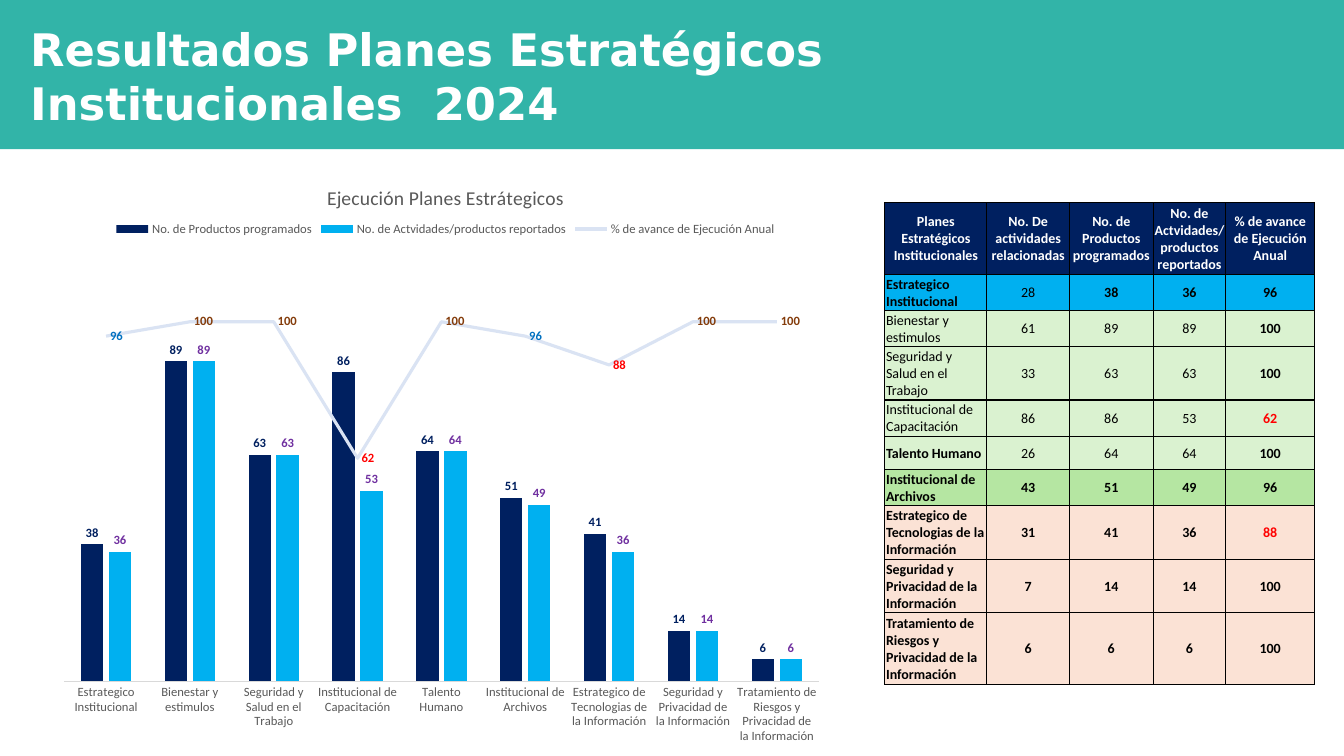
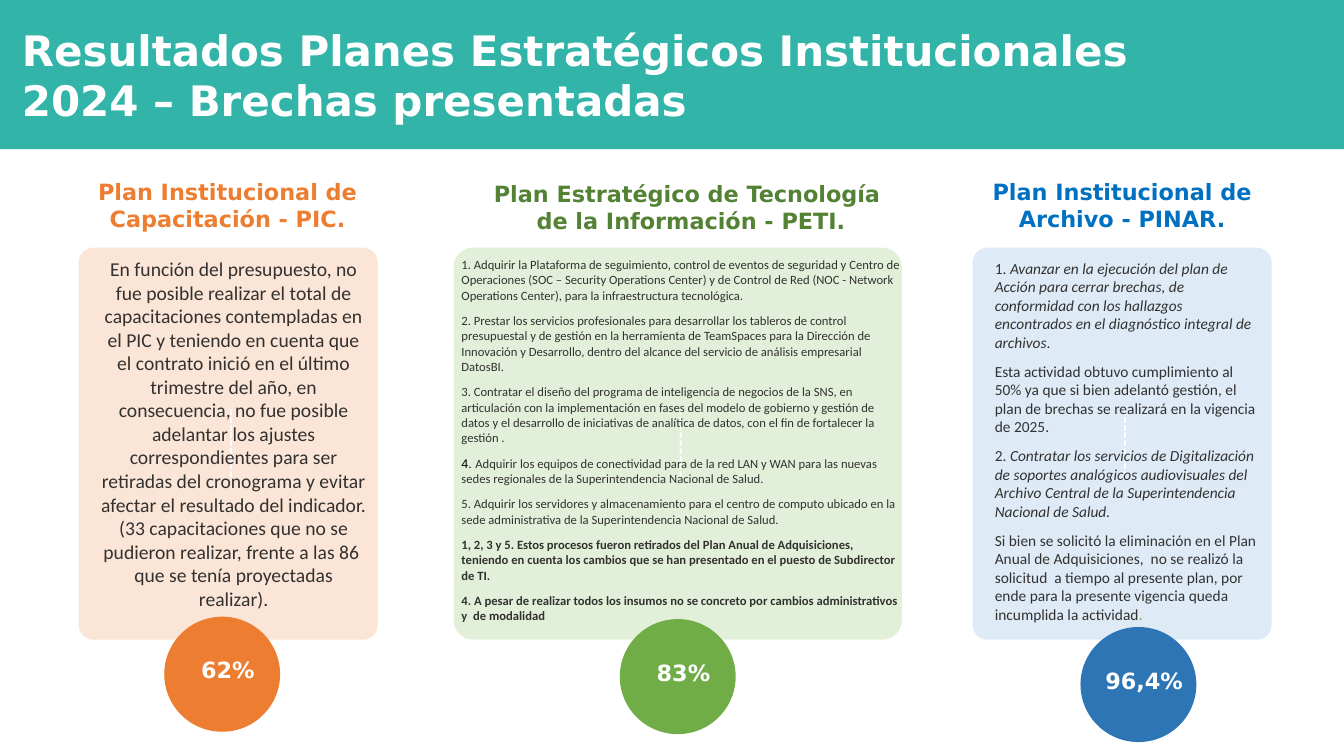
from copy import deepcopy

from lxml import etree
from pptx import Presentation
from pptx import util as u
from pptx.chart.data import CategoryChartData
from pptx.dml.color import RGBColor
from pptx.enum import chart as charts, shapes, text
from pptx.oxml import parse_xml
from pptx.oxml.ns import nsdecls, qn

COLORS = {
    "teal": "32B4A8", "white": "FFFFFF", "black": "000000", "ink": "323130",
    "gray": "595959", "axis": "D9D9D9", "navy": "002060", "sky": "00B0F0",
    "purple": "7030A0", "pale_line": "DAE3F3", "brown": "843C0B",
    "blue": "0070C0", "red": "FF0000", "mint": "DAF2D0", "lime": "B5E6A2",
    "peach": "FBE2D5", "orange": "ED7D31", "orange_pale": "FBE5D6",
    "green": "70AD47", "green_dark": "548235", "green_pale": "E2F0D9",
    "blue_mid": "2E75B6", "blue_pale": "DEEBF7",
}
BODY_FONT = "Calibri"
HEAD_FONT = "DejaVu Sans"

HEADERS = [
    "Planes Estratégicos Institucionales",
    "No. De actividades relacionadas",
    "No. de Productos programados",
    "No. de Actvidades/productos reportados",
    "% de avance de Ejecución Anual",
]
PLANS = [
    ("Estrategico Institucional", 28, 38, 36, 96, "sky", "10111"),
    ("Bienestar y estimulos", 61, 89, 89, 100, "mint", "00001"),
    ("Seguridad y Salud en el Trabajo", 33, 63, 63, 100, "mint", "00001"),
    ("Institucional de Capacitación", 86, 86, 53, 62, "mint", "00001"),
    ("Talento Humano", 26, 64, 64, 100, "mint", "10001"),
    ("Institucional de Archivos", 43, 51, 49, 96, "lime", "11111"),
    ("Estrategico de Tecnologias de la Información", 31, 41, 36, 88, "peach", "11111"),
    ("Seguridad y Privacidad de la Información", 7, 14, 14, 100, "peach", "11111"),
    ("Tratamiento de Riesgos y Privacidad de la Información", 6, 6, 6, 100, "peach", "11111"),
]
COLUMN_WIDTHS = [2.57, 2.08, 2.11, 1.83, 2.24]
ROW_HEIGHTS = [1.8, 0.91, 0.91, 1.35, 0.91, 0.84, 0.91, 1.35, 1.35, 1.8]

BOLD = {"bold": True}
ITALIC = {"italic": True}
PANEL_MIDDLE = 11.18
PANEL_HEIGHT = 9.88
GAPS = [
    {
        "heading": ["Plan Institucional de Capacitación - PIC."],
        "heading_box": (0.91, 4.5, 9.65, 1.4), "heading_color": "orange",
        "panel_center": 5.75, "panel_width": 7.54, "panel_color": "orange_pale",
        "body_box": (2.51, 6.48, 6.76, 9), "size": 14,
        "align": text.PP_ALIGN.CENTER,
        "body": [
            [("En función del presupuesto, no fue posible realizar el total de capacitaciones contempladas en el PIC y teniendo en cuenta que el contrato inició en el último trimestre del año, en consecuencia, no fue posible adelantar los ajustes correspondientes para ser retiradas del cronograma y evitar afectar el resultado del indicador. (33 capacitaciones que no se pudieron realizar, frente a las 86  que se tenía proyectadas realizar).", {})],
        ],
        "circle": (4.14, 15.54), "circle_color": "orange", "percent": "62%",
    },
    {
        "heading": ["Plan Estratégico de Tecnología ", "de la Información - PETI."],
        "heading_box": (8.03, 4.55, 18.77, 1.4), "heading_color": "green_dark",
        "panel_center": 17.08, "panel_width": 11.3, "panel_color": "green_pale",
        "body_box": (11.63, 6.48, 11.1, 9), "size": 9,
        "align": text.PP_ALIGN.LEFT,
        "body": [
            [("1. Adquirir la Plataforma de seguimiento, control de eventos de seguridad y Centro de Operaciones (SOC – Security Operations Center) y de Control de Red (NOC - Network Operations Center), para la infraestructura tecnológica.", {})],
            [("2. Prestar los servicios profesionales para desarrollar los tableros de control presupuestal y de gestión en la herramienta de TeamSpaces para la Dirección de Innovación y Desarrollo, dentro del alcance del servicio de análisis empresarial DatosBI.", {})],
            [("3. Contratar el diseño del programa de inteligencia de negocios de la SNS, en articulación con la implementación en fases del modelo de gobierno y gestión de datos y el desarrollo de iniciativas de analítica de datos, con el fin de fortalecer la gestión .", {})],
            [("4. ", {"font": "Arial", "color": "black"}),
             ("Adquirir los equipos de conectividad para de la red LAN y WAN para las nuevas sedes regionales de la Superintendencia Nacional de Salud.", {})],
            [("5. Adquirir los servidores y almacenamiento para el centro de computo ubicado en la sede administrativa de la Superintendencia Nacional de Salud.", {})],
            [("1, 2, 3 y 5. Estos procesos fueron retirados del Plan Anual de Adquisiciones, teniendo en cuenta los cambios que se han presentado en el puesto de Subdirector de TI.", BOLD)],
            [("4. A pesar de realizar todos los insumos no se concreto por cambios administrativos y  de modalidad", BOLD)],
        ],
        "circle": (15.62, 15.6), "circle_color": "green", "percent": "83%",
    },
    {
        "heading": ["Plan Institucional de Archivo - PINAR."],
        "heading_box": (24.51, 4.5, 7.54, 1.4), "heading_color": "blue",
        "panel_center": 28.28, "panel_width": 7.54, "panel_color": "blue_pale",
        "body_box": (25.07, 6.53, 6.71, 9), "size": 11,
        "align": text.PP_ALIGN.LEFT,
        "body": [
            [("1. ", {}),
             ("Avanzar en la ejecución del plan de Acción para cerrar brechas, de conformidad con los hallazgos encontrados en el diagnóstico integral de archivos", ITALIC),
             (".", {})],
            [("Esta actividad obtuvo cumplimiento al 50% ya que si bien adelantó gestión, el plan de brechas se realizará en la vigencia de 2025.", {})],
            [("2. ", {}),
             ("Contratar los servicios de Digitalización de soportes analógicos audiovisuales del Archivo Central de la Superintendencia Nacional de Salud.", ITALIC)],
            [("Si bien se solicitó la eliminación en el Plan Anual de Adquisiciones,  no se realizó la solicitud  a tiempo al presente plan, por ende para la presente vigencia queda incumplida la actividad", {}),
             (".", {"color": "green"})],
        ],
        "circle": (27.23, 15.8), "circle_color": "blue_mid", "percent": "96,4%",
    },
]


def rgb(name):
    return RGBColor.from_string(COLORS[name])


def cm(*values):
    return [u.Cm(value) for value in values]


def style_font(font, size, color, bold=False, italic=False, name=BODY_FONT):
    font.size, font.name = u.Pt(size), name
    font.bold, font.italic = bold, italic
    font.color.rgb = rgb(color)


def write(para, words, size, color, bold=False, italic=False, font=BODY_FONT):
    span = para.add_run()
    span.text = words
    style_font(span.font, size, color, bold, italic, font)


def set_margins(target, left, top, right, bottom):
    target.margin_left, target.margin_top, target.margin_right, target.margin_bottom = cm(
        left, top, right, bottom)


def add_shape(page, kind, place, color):
    shape = page.shapes.add_shape(kind, *cm(*place))
    shape.shadow.inherit = False
    shape.fill.solid()
    shape.fill.fore_color.rgb = rgb(color)
    shape.line.fill.background()
    return shape


def add_text(page, place, paragraphs, size, color, align, after=0, font=BODY_FONT):
    frame = page.shapes.add_textbox(*cm(*place)).text_frame
    frame.word_wrap = True
    set_margins(frame, 0, 0, 0, 0)
    for index, runs in enumerate(paragraphs):
        para = frame.add_paragraph() if index else frame.paragraphs[0]
        para.alignment = align
        para.space_after = u.Pt(after)
        for words, changes in runs:
            write(para, words, **{"size": size, "color": color, "font": font, **changes})


def add_page(deck, title, place, size):
    page = deck.slides.add_slide(deck.slide_layouts[5])
    box = page.shapes.title
    box.left, box.top, box.width, box.height = cm(*place)
    frame = box.text_frame
    frame.word_wrap = True
    frame.auto_size = text.MSO_AUTO_SIZE.NONE
    frame.vertical_anchor = text.MSO_ANCHOR.TOP
    set_margins(frame, 0.25, 0.25, 0.25, 0.25)
    frame.paragraphs[0].alignment = text.PP_ALIGN.LEFT
    write(frame.paragraphs[0], title, size, "white", True, font=HEAD_FONT)
    return page


def move_band_to_layout(page):
    band = add_shape(page, shapes.MSO_SHAPE.RECTANGLE, (0, 0, 33.87, 3.76), "teal")
    band.element.nvSpPr.cNvPr.set("id", "99")
    page.slide_layout.shapes.element.insert(2, band.element)


def border_cell(cell):
    properties = cell._tc.get_or_add_tcPr()
    for index, side in enumerate(("lnL", "lnR", "lnT", "lnB")):
        properties.insert(index, parse_xml(
            f'<a:{side} {nsdecls("a")} w="12700"><a:solidFill>'
            f'<a:srgbClr val="{COLORS["black"]}"/></a:solidFill></a:{side}>'))


def fill_cell(cell, words, fill, color, bold, align):
    cell.fill.solid()
    cell.fill.fore_color.rgb = rgb(fill)
    cell.vertical_anchor = text.MSO_ANCHOR.MIDDLE
    set_margins(cell, 0.03, 0.03, 0.03, 0)
    para = cell.text_frame.paragraphs[0]
    para.alignment = align
    write(para, words, 10, color, bold)
    border_cell(cell)


def add_plan_table(page):
    place = cm(22.3, 5.11, sum(COLUMN_WIDTHS), sum(ROW_HEIGHTS))
    table = page.shapes.add_table(len(ROW_HEIGHTS), len(COLUMN_WIDTHS), *place).table
    for column, width in zip(table.columns, COLUMN_WIDTHS):
        column.width = u.Cm(width)
    for row, height in zip(table.rows, ROW_HEIGHTS):
        row.height = u.Cm(height)
    for column, header in enumerate(HEADERS):
        fill_cell(table.cell(0, column), header, "navy", "white", True, text.PP_ALIGN.CENTER)
    for row, (*values, fill, bolds) in enumerate(PLANS, 1):
        for column, value in enumerate(values):
            late = column == 4 and value < 90
            align = text.PP_ALIGN.CENTER if column else text.PP_ALIGN.LEFT
            fill_cell(table.cell(row, column), str(value), fill,
                      "red" if late else "black", bolds[column] == "1", align)


def set_layout(element, index, inner=False, **fractions):
    for old in element.findall(qn("c:layout")):
        element.remove(old)
    layout = etree.Element(qn("c:layout"))
    manual = etree.SubElement(layout, qn("c:manualLayout"))
    entries = {"layoutTarget": "inner"} if inner else {}
    entries.update({"xMode": "edge", "yMode": "edge"}, **fractions)
    for tag, value in entries.items():
        etree.SubElement(manual, qn(f"c:{tag}")).set("val", str(value))
    element.insert(index, layout)


def split_line_series(chart):
    bars = chart.plots[0]._element
    series = bars.findall(qn("c:ser"))[-1]
    for flag in series.findall(qn("c:invertIfNegative")):
        series.remove(flag)
    lines = parse_xml(f'<c:lineChart {nsdecls("c")}><c:grouping val="standard"/>'
                      '<c:varyColors val="0"/><c:marker val="1"/></c:lineChart>')
    lines.insert(2, series)
    for axis in bars.findall(qn("c:axId")):
        lines.append(deepcopy(axis))
    bars.addnext(lines)
    return chart.plots[1].series[0]


def label_series(series, color, position):
    labels = series.data_labels
    labels.show_value = True
    labels.number_format, labels.number_format_is_linked = "0", False
    labels.position = position
    style_font(labels.font, 9, color, True)


def add_plan_chart(page):
    data = CategoryChartData(number_format="0")
    data.categories = [plan[0] for plan in PLANS]
    for column in (2, 3, 4):
        data.add_series(HEADERS[column], [plan[column] for plan in PLANS])
    chart = page.shapes.add_chart(charts.XL_CHART_TYPE.COLUMN_CLUSTERED,
                                  *cm(1.22, 3.96, 19.81, 15.09), data).chart
    style_font(chart.font, 10, "black")
    chart.has_title = True
    write(chart.chart_title.text_frame.paragraphs[0], "Ejecución Planes Estrátegicos", 14, "gray")
    chart.has_legend = True
    chart.legend.position = charts.XL_LEGEND_POSITION.TOP
    chart.legend.include_in_layout = False
    style_font(chart.legend.font, 9, "gray")

    names, values = chart.category_axis, chart.value_axis
    names.major_tick_mark = charts.XL_TICK_MARK.NONE
    names.format.line.color.rgb = rgb("axis")
    names.format.line.width = u.Pt(0.75)
    style_font(names.tick_labels.font, 9, "gray")
    values.visible = values.has_major_gridlines = False
    values.minimum_scale, values.maximum_scale = 0, 120

    progress = split_line_series(chart)
    bars = chart.plots[0]
    bars.gap_width, bars.overlap, bars.vary_by_categories = 150, -25, False
    for series, fill, label in zip(bars.series, ("navy", "sky"), ("navy", "purple")):
        series.format.fill.solid()
        series.format.fill.fore_color.rgb = rgb(fill)
        label_series(series, label, charts.XL_LABEL_POSITION.OUTSIDE_END)
    progress.format.line.color.rgb = rgb("pale_line")
    progress.format.line.width = u.Pt(2.25)
    progress.marker.style = charts.XL_MARKER_STYLE.NONE
    progress.smooth = False
    label_series(progress, "brown", charts.XL_LABEL_POSITION.RIGHT)
    for index, value in enumerate(progress.values):
        if value < 100:
            label = progress.points[index].data_label
            style_font(label.font, 9, "red" if value < 90 else "blue", True)
            label.position = charts.XL_LABEL_POSITION.RIGHT

    set_layout(chart.chart_title._element, 1, x=0.35, y=0.04)
    set_layout(chart.legend._element, 1, x=0.08, y=0.1, w=0.85, h=0.04)
    set_layout(bars._element.getparent(), 0, True, x=0.02, y=0.155, w=0.96, h=0.72)


def add_gap(page, gap):
    center = text.PP_ALIGN.CENTER
    heading = [[(line, BOLD)] for line in gap["heading"]]
    add_text(page, gap["heading_box"], heading, 16, gap["heading_color"], center, font=HEAD_FONT)
    width = gap["panel_width"]
    place = (gap["panel_center"] - PANEL_HEIGHT / 2, PANEL_MIDDLE - width / 2, PANEL_HEIGHT, width)
    panel = add_shape(page, shapes.MSO_SHAPE.ROUNDED_RECTANGLE, place, gap["panel_color"])
    panel.rotation = 270
    panel.adjustments[0] = 0.05
    panel.text_frame.vertical_anchor = text.MSO_ANCHOR.MIDDLE
    panel.text_frame.paragraphs[0].alignment = center
    write(panel.text_frame.paragraphs[0], "---------", 18, "white")
    add_text(page, gap["body_box"], gap["body"], gap["size"], "ink", gap["align"], 7.5)
    left, top = gap["circle"]
    add_shape(page, shapes.MSO_SHAPE.OVAL, (left, top, 2.92, 2.9), gap["circle_color"])
    add_text(page, (left + 0.5, top + 1, 2.21, 0.69), [[(gap["percent"], BOLD)]],
             16, "white", center, font=HEAD_FONT)


def main():
    deck = Presentation()
    deck.slide_width, deck.slide_height = cm(33.87, 19.05)
    results = add_page(deck, "Resultados Planes Estratégicos Institucionales  2024",
                       (0.51, 0.3, 25.02, 2.64), 32)
    move_band_to_layout(results)
    add_plan_table(results)
    add_plan_chart(results)
    gaps = add_page(deck, "Resultados Planes Estratégicos Institucionales  2024 – Brechas presentadas",
                    (0.3, 0.36, 28.78, 2.64), 30)
    for gap in GAPS:
        add_gap(gaps, gap)
    deck.save("out.pptx")


if __name__ == "__main__":
    main()
